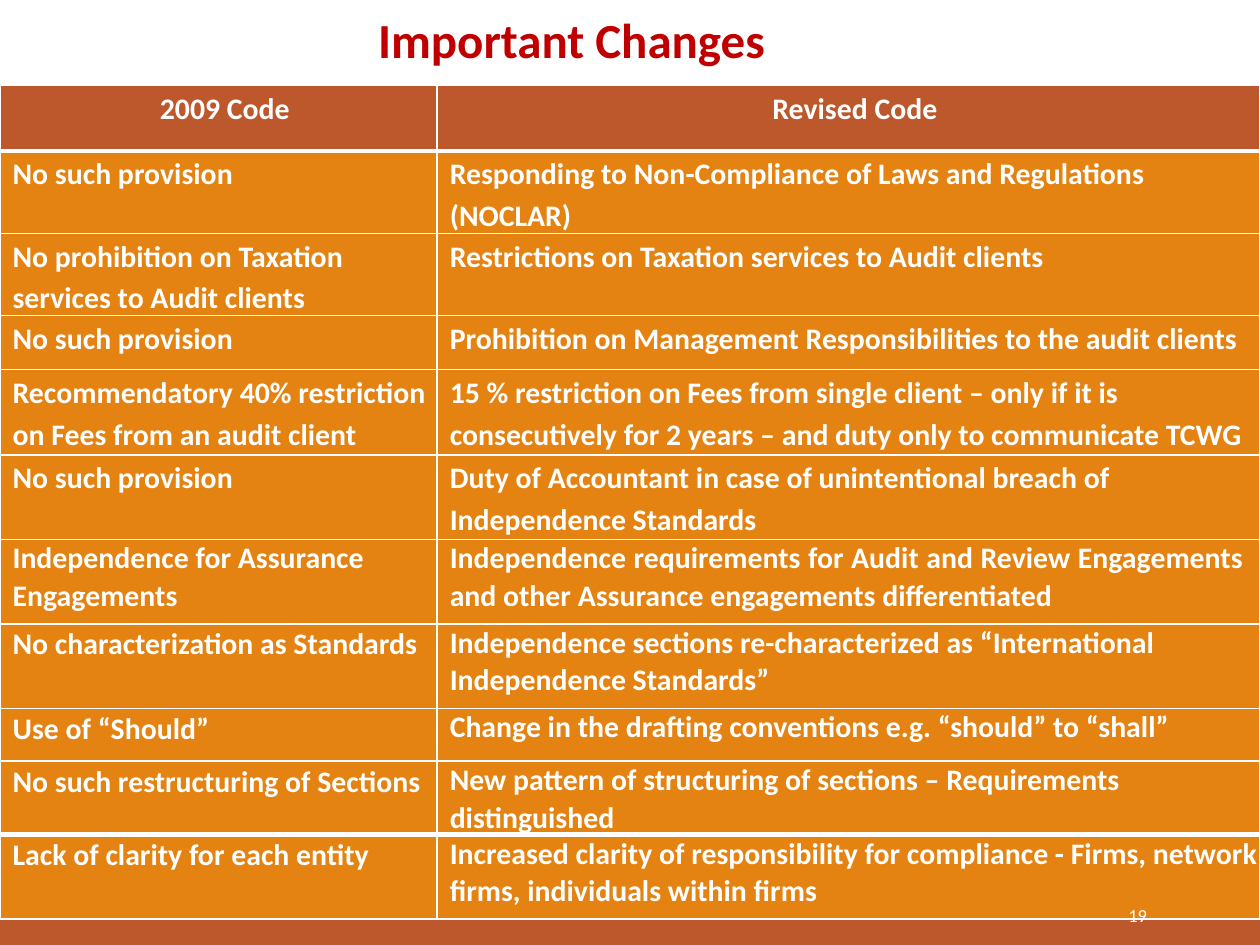
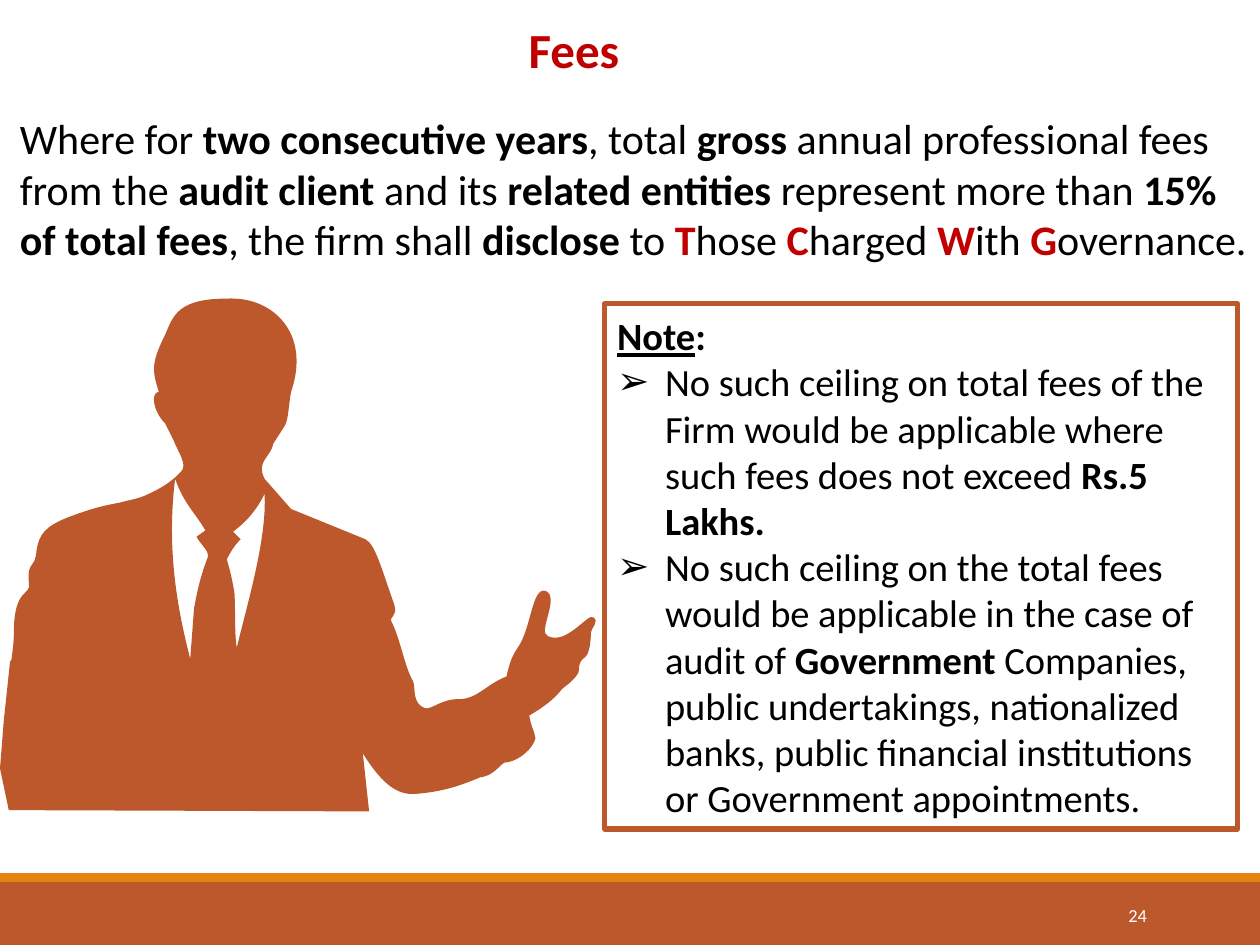
from lxml.etree import SubElement
from pptx import Presentation
from pptx.dml.color import RGBColor
from pptx.enum.shapes import MSO_SHAPE
from pptx.enum.text import MSO_ANCHOR, MSO_AUTO_SIZE, PP_ALIGN
from pptx.oxml.ns import qn
from pptx.util import Pt

PX = 9144  # EMU per px, 100 px to the inch
FONT = "Calibri"
COLOURS = {
    "rust": "BD582C",
    "orange": "E48312",
    "red": "C00000",
    "black": "000000",
    "white": "FFFFFF",
}
RGB = {name: RGBColor.from_string(value) for name, value in COLOURS.items()}


def write(paragraph, marked_text, size, colour):
    """Write text whose *starred* parts are bold; a starred single capital is also red."""
    for index, part in enumerate(marked_text.split("*")):
        if not part:
            continue
        run = paragraph.add_run()
        run.text = part
        font = run.font
        font.name, font.size = FONT, Pt(size)
        font.bold = index % 2 == 1
        is_initial = font.bold and len(part) == 1 and part.isupper()
        font.color.rgb = RGB["red" if is_initial else colour]


def add_text_box(slide, left, top, width, height):
    box = slide.shapes.add_textbox(left * PX, top * PX, width * PX, height * PX)
    frame = box.text_frame
    frame.word_wrap = True
    frame.vertical_anchor = MSO_ANCHOR.MIDDLE
    return frame


prs = Presentation()
prs.slide_width, prs.slide_height = 1000 * PX, 750 * PX

# Shared bands and titles
slides = []
for title, title_left, title_top in [("Important Changes", -2, -3), ("Fees", 0, 5)]:
    slide = prs.slides.add_slide(prs.slide_layouts[6])
    slides.append(slide)
    for band_top, band_height, colour in [(700, 50, "rust"), (693, 7, "orange")]:
        band = slide.shapes.add_shape(
            MSO_SHAPE.RECTANGLE, 0, band_top * PX, 1000 * PX, band_height * PX)
        band.shadow.inherit = False
        band.fill.solid()
        band.fill.fore_color.rgb = RGB[colour]
        band.line.fill.background()

    title_frame = add_text_box(slide, title_left, title_top, 1008, 61)
    title_frame.auto_size = MSO_AUTO_SIZE.SHAPE_TO_FIT_TEXT
    heading = title_frame.paragraphs[0]
    heading.alignment = PP_ALIGN.CENTER
    heading.line_spacing = 1.15
    heading_properties = heading._p.get_or_add_pPr()
    heading_properties.set("marL", str(19 * PX))
    heading_properties.set("marR", str(116 * PX))
    write(heading, f"*{title}*", 28, "red")

changes_slide, fees_slide = slides

# Important Changes: row height, line spacing of both cells, and their texts
changes = [
    (52, 1.15, 1.15, "2009 Code", "Revised Code"),
    (43, 1.15, 1.15, "No such provision",
     "Responding to Non-Compliance of Laws and Regulations (NOCLAR)"),
    (65, 1.15, 1.15, "No prohibition on Taxation services to Audit clients",
     "Restrictions on Taxation services to Audit clients"),
    (43, 1.15, 1.15, "No such provision",
     "Prohibition on Management Responsibilities to the audit clients"),
    (68, 1.15, 1.15, "Recommendatory 40% restriction on Fees from an audit client",
     "15 % restriction on Fees from single client – only if it is consecutively "
     "for 2 years – and duty only to communicate TCWG"),
    (67, 1.15, 1.15, "No such provision",
     "Duty of Accountant in case of unintentional breach of Independence Standards"),
    (67, 1.03, 1.03, "Independence for Assurance Engagements",
     "Independence requirements for Audit and Review Engagements and other "
     "Assurance engagements differentiated"),
    (67, 1.07, 1.03, "No characterization as Standards",
     "Independence sections re-characterized as “International Independence Standards”"),
    (42, 1.07, 1.03, "Use of “Should”",
     "Change in the drafting conventions e.g. “should” to “shall”"),
    (42, 1.07, 1.03, "No such restructuring of Sections",
     "New pattern of structuring of sections – Requirements distinguished"),
    (67, 1.07, 1.03, "Lack of clarity for each entity",
     "Increased clarity of responsibility for compliance - Firms, network firms, "
     "individuals within firms"),
]
last_row = len(changes) - 1
thick_edges = {(0, "lnB"), (1, "lnT"), (last_row - 1, "lnB"), (last_row, "lnT")}

comparison = changes_slide.shapes.add_table(
    len(changes), 2, 0, 68 * PX, 1000 * PX, 657 * PX).table
comparison.horz_banding = False
for column, width in zip(comparison.columns, (347, 653)):
    column.width = width * PX
for row, (height, old_spacing, new_spacing, old_text, new_text) in enumerate(changes):
    comparison.rows[row].height = height * PX
    for col, (spacing, text) in enumerate([(old_spacing, old_text), (new_spacing, new_text)]):
        cell = comparison.cell(row, col)
        cell.margin_left = cell.margin_right = cell.margin_top = cell.margin_bottom = 0
        cell_properties = cell._tc.get_or_add_tcPr()
        for edge in ("lnL", "lnR", "lnT", "lnB"):
            points = 3 if (row, edge) in thick_edges else 1
            border = SubElement(cell_properties, qn(f"a:{edge}"), w=str(Pt(points)))
            border_fill = SubElement(border, qn("a:solidFill"))
            SubElement(border_fill, qn("a:srgbClr"), val=COLOURS["white"])
        cell.fill.solid()
        cell.fill.fore_color.rgb = RGB["rust" if row == 0 else "orange"]
        entry = cell.text_frame.paragraphs[0]
        entry.line_spacing = spacing
        entry.space_before = Pt(3.4 if spacing == 1.15 else 3.5)
        entry_properties = entry._p.get_or_add_pPr()
        entry_properties.set("marL", str(10 * PX))
        if row == 0:
            entry.alignment = PP_ALIGN.CENTER
        elif (row, col) == (6, 1):
            entry.alignment = PP_ALIGN.JUSTIFY
            entry_properties.set("marR", str(13 * PX))
        write(entry, f"*{text}*", 17, "white")

# Fees: the rule
rule_frame = add_text_box(fees_slide, 6, 84, 994, 131)
rule_frame.auto_size = MSO_AUTO_SIZE.SHAPE_TO_FIT_TEXT
write(
    rule_frame.paragraphs[0],
    "Where for *two consecutive years*, total *gross* annual professional fees from the "
    "*audit client* and its *related entities* represent more than *15% of total fees*, "
    "the firm shall *disclose* to *T*hose *C*harged *W*ith *G*overnance.",
    24, "black")

# Fees: the framed note
note = fees_slide.shapes.add_shape(
    MSO_SHAPE.RECTANGLE, 480 * PX, 241 * PX, 502 * PX, 417 * PX)
note.shadow.inherit = False
note.fill.background()
note.line.color.rgb = RGB["rust"]
note.line.width = Pt(3)
note_frame = note.text_frame
note_frame.word_wrap = True
note_frame.vertical_anchor = MSO_ANCHOR.MIDDLE
note_frame.auto_size = MSO_AUTO_SIZE.SHAPE_TO_FIT_TEXT
note_heading = note_frame.paragraphs[0]
note_heading.alignment = PP_ALIGN.LEFT
write(note_heading, "*Note*", 22, "black")
write(note_heading, "*:*", 22, "black")
note_heading.runs[0].font.underline = True
for exemption in [
    "No such ceiling on total fees of the Firm would be applicable where such fees "
    "does not exceed *Rs.5 Lakhs.*",
    "No such ceiling on the total fees would be applicable in the case of audit of "
    "*Government* Companies, public undertakings, nationalized banks, public financial "
    "institutions or Government appointments.",
]:
    item = note_frame.add_paragraph()
    item.alignment = PP_ALIGN.LEFT
    item_properties = item._p.get_or_add_pPr()
    item_properties.set("marL", str(38 * PX))
    item_properties.set("indent", str(-38 * PX))
    SubElement(item_properties, qn("a:buFont"), typeface=FONT)
    SubElement(item_properties, qn("a:buChar"), char="➢")
    write(item, exemption, 22, "black")

# Fees: the speaker. Each outline is a start point, then lines (x, y)
# or curves (control 1, control 2, end), all in px.
right_shirt = [
    (210, 392), (212, 428, 196, 480, 188, 514), (186, 506, 187, 480, 186, 470),
    (184, 459, 183, 454, 180, 444), (183, 438, 186, 433, 191, 428), (185, 422),
    (197, 413, 204, 404, 210, 392),
]
left_shirt = [
    (139, 380), (146, 400, 155, 407, 163, 421), (156, 426), (159, 432, 166, 437, 165, 442),
    (159, 458, 157, 467, 154, 483), (151, 523), (141, 484, 132, 437, 139, 380),
]
body = [
    (180, 237), (136, 237, 137, 255, 129, 270), (119, 291, 122, 297, 126, 311),
    (119, 312, 122, 327, 131, 336), (138, 350), (141, 358, 149, 369, 144, 374),
    (137, 382, 127, 388, 118, 392), (110, 396, 106, 396, 95, 399),
    (78, 402, 69, 405, 53, 411), (36, 418, 31, 424, 29, 437),
    (28, 452, 21, 445, 23, 463), (25, 473, 11, 466, 11, 502),
    (11, 510, 10, 517, 9, 524), (8, 525), (3, 572), (0, 610), (7, 643), (293, 644),
    (288, 598), (302, 620, 314, 632, 331, 630), (356, 628, 371, 621, 381, 617),
    (395, 615, 397, 604, 403, 605), (413, 603, 423, 594, 425, 586),
    (425, 581, 423, 582, 420, 568), (430, 562, 439, 556, 446, 547),
    (449, 544, 455, 541, 459, 534), (461, 530, 457, 527, 465, 521),
    (468, 518, 469, 508, 469, 502), (469, 499, 476, 493, 471, 490),
    (467, 486, 450, 512, 435, 505), (426, 502, 445, 474, 433, 469),
    (422, 466, 422, 498, 411, 514), (406, 521, 404, 528, 402, 537),
    (386, 543, 380, 554, 365, 555), (351, 554, 342, 564, 337, 562),
    (327, 558, 330, 547, 328, 541), (321, 529, 318, 508, 311, 494),
    (308, 489, 316, 490, 313, 480), (303, 452, 298, 432, 290, 428), (231, 404),
    (210, 380), (203, 366, 215, 363, 217, 352), (226, 338),
    (229, 333, 229, 322, 231, 311), (247, 265, 217, 235, 180, 237),
]
outlines = [right_shirt, left_shirt, body]
speaker_builder = fees_slide.shapes.build_freeform(*right_shirt[0], scale=PX)
for start, *segments in outlines:
    if start != right_shirt[0]:
        speaker_builder.move_to(*start)
    speaker_builder.add_line_segments([segment[-2:] for segment in segments], close=True)
speaker = speaker_builder.convert_to_shape()
speaker.shadow.inherit = False
speaker.fill.solid()
speaker.fill.fore_color.rgb = RGB["rust"]
speaker.line.fill.background()

# Bend the straight segments that have control points
speaker_left, speaker_top = round(speaker.left / PX), round(speaker.top / PX)
all_segments = [segment for outline in outlines for segment in outline[1:]]
straight_lines = list(speaker._element.iter(qn("a:lnTo")))
for line, segment in zip(straight_lines, all_segments):
    if len(segment) == 6:
        line.tag = qn("a:cubicBezTo")
        line.remove(line[0])
        for x, y in zip(segment[::2], segment[1::2]):
            SubElement(line, qn("a:pt"), x=str(x - speaker_left), y=str(y - speaker_top))

# Page numbers lie above everything else
for slide, page in zip(slides, ("19", "24")):
    page_number = add_text_box(slide, 812, 706, 108, 40).paragraphs[0]
    page_number.alignment = PP_ALIGN.RIGHT
    write(page_number, page, 10.5, "white")

prs.save("out.pptx")
